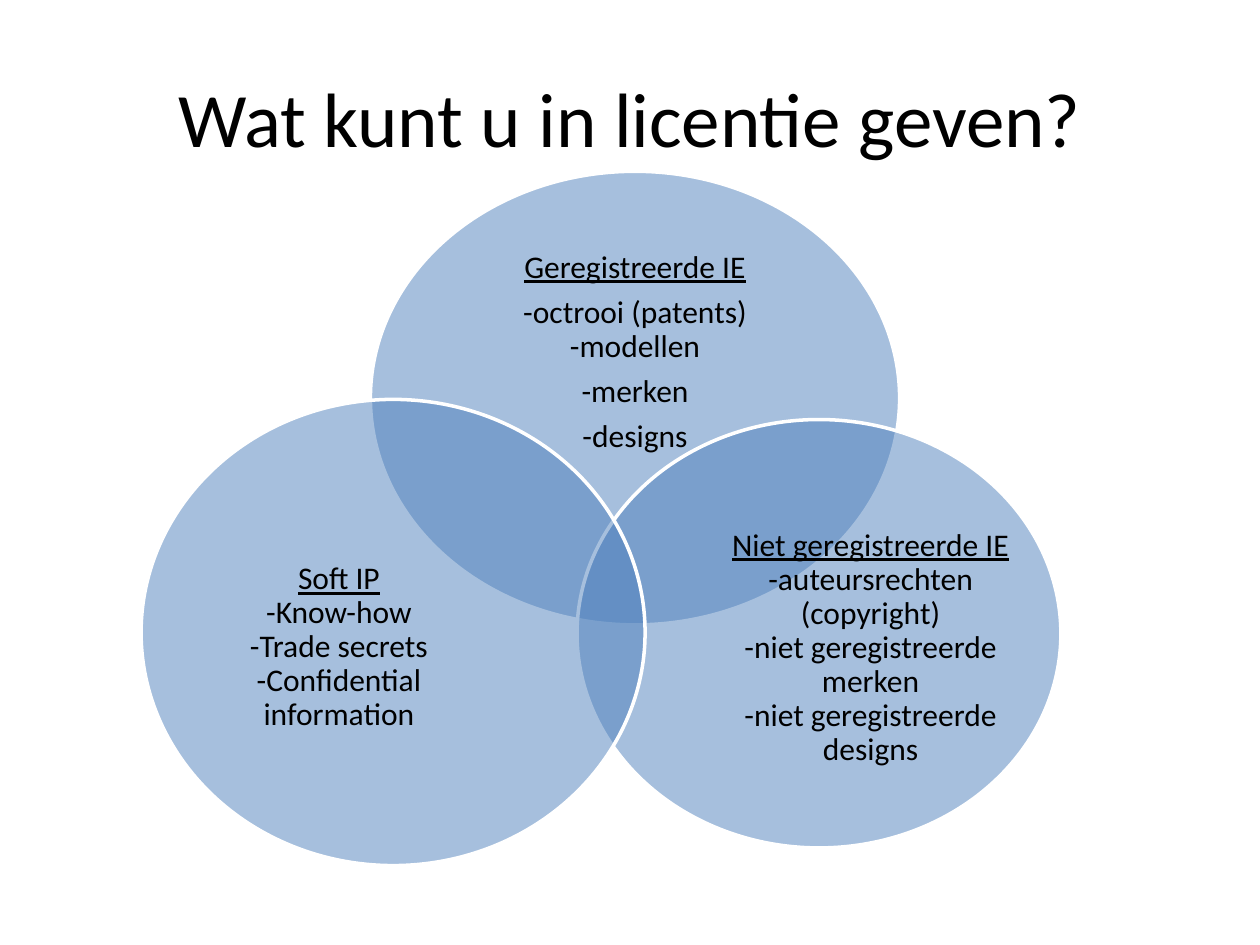
from dataclasses import dataclass

from lxml import etree
from pptx import Presentation
from pptx.dml.color import RGBColor as RGB
from pptx.enum.shapes import MSO_SHAPE as SHAPE
from pptx.enum.text import MSO_ANCHOR as ANCHOR, PP_ALIGN as ALIGN
from pptx.oxml.ns import qn
from pptx.util import Inches, Pt


@dataclass(frozen=True)
class Theme:
    font: str = "Calibri"
    ink: RGB = RGB(0x00, 0x00, 0x00)
    circle: RGB = RGB(0x4F, 0x81, 0xBD)
    edge: RGB = RGB(0xFF, 0xFF, 0xFF)
    alpha: int = 50
    title_size: int = 44
    label_size: int = 18
    edge_width: int = 2
    line_spacing: float = 0.9
    gap: float = 6.3


THEME = Theme()
COLS = 100
TITLE = "Wat kunt u in licentie geven?"
TITLE_BOX = (5, 3, 90, 12.5)
VENN = [
    ((29.4, 13.6, 42, 36), (35, 19.9, 30.8, 16.2), [
        ["Geregistreerde IE"],
        ["-octrooi (patents)", "-modellen"],
        ["-merken"],
        ["-designs"],
    ]),
    ((45.8, 33.3, 38.4, 34), (57.6, 42.1, 23, 18.7), [
        ["Niet geregistreerde IE", "-auteursrechten (copyright)",
         "-niet geregistreerde merken", "-niet geregistreerde designs"],
    ]),
    ((11.2, 31.7, 40, 37), (14.9, 41.2, 24, 20.4), [
        ["Soft IP", "-Know-how", "-Trade secrets",
         "-Confidential information"],
    ]),
]


def grid(prs, box):
    return [round(n * prs.slide_width / COLS) for n in box]


def style(p, size):
    p.alignment = ALIGN.CENTER
    p.font.name = THEME.font
    p.font.size = Pt(size)
    p.font.color.rgb = THEME.ink


def text_frame(shapes, box):
    tf = shapes.add_textbox(*box).text_frame
    tf.word_wrap = True
    tf.vertical_anchor = ANCHOR.MIDDLE
    return tf


def add_title(shapes, box):
    p = text_frame(shapes, box).paragraphs[0]
    p.text = TITLE
    style(p, THEME.title_size)


def add_circle(shapes, box):
    s = shapes.add_shape(SHAPE.OVAL, *box)
    s.shadow.inherit = False
    s.fill.solid()
    s.fill.fore_color.rgb = THEME.circle
    color = s.fill._xPr.find(qn("a:solidFill"))[0]
    etree.SubElement(color, qn("a:alpha"), val=str(THEME.alpha * 1000))
    s.line.color.rgb = THEME.edge
    s.line.width = Pt(THEME.edge_width)


def add_label(shapes, box, paragraphs):
    tf = text_frame(shapes, box)
    tf.margin_left = tf.margin_right = tf.margin_top = tf.margin_bottom = 0
    for i, lines in enumerate(paragraphs):
        p = tf.add_paragraph() if i else tf.paragraphs[0]
        style(p, THEME.label_size)
        p.line_spacing = THEME.line_spacing
        p.space_after = Pt(THEME.gap)
        for j, line in enumerate(lines):
            if j:
                p.add_line_break()
            r = p.add_run()
            r.text = line
            if i == j == 0:
                r.font.underline = True


def add_venn(prs, shapes):
    group = shapes.add_group_shape().shapes
    for circle, label, paragraphs in VENN:
        add_circle(group, grid(prs, circle))
        add_label(group, grid(prs, label), paragraphs)


def main():
    prs = Presentation()
    prs.slide_width, prs.slide_height = Inches(10), Inches(7.5)
    shapes = prs.slides.add_slide(prs.slide_layouts[6]).shapes
    add_title(shapes, grid(prs, TITLE_BOX))
    add_venn(prs, shapes)
    prs.save("out.pptx")


if __name__ == "__main__":
    main()
